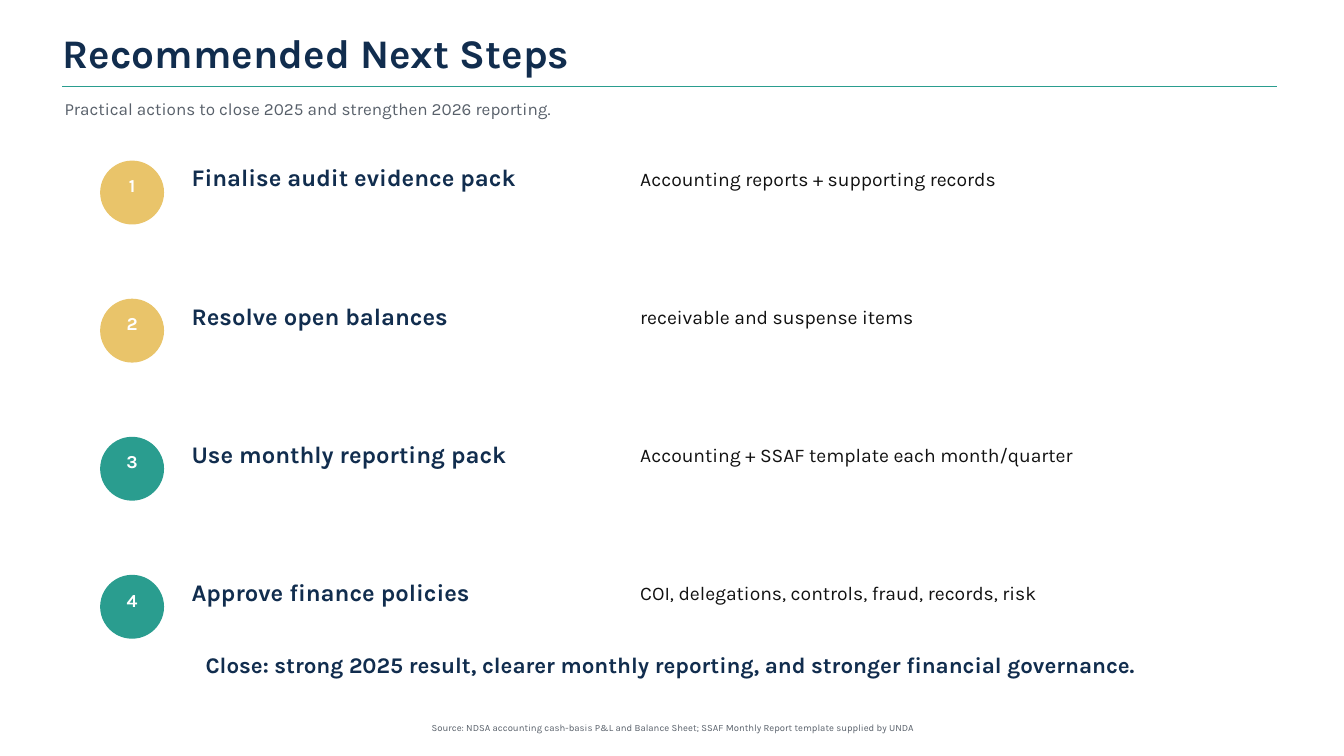
from pptx import Presentation
from pptx.dml.color import RGBColor
from pptx.enum import shapes, text
from pptx.oxml import ns
from pptx.util import Inches, Pt

NAVY = RGBColor(0x11, 0x2D, 0x4E)
TEAL = RGBColor(0x2A, 0x9D, 0x8F)
GOLD = RGBColor(0xE9, 0xC4, 0x6A)
GREY = RGBColor(0x58, 0x60, 0x6A)
INK = RGBColor(0x11, 0x11, 0x11)
WHITE = RGBColor(0xFF, 0xFF, 0xFF)
FONT = "Karla"
LEFT, MID = text.PP_ALIGN.LEFT, text.PP_ALIGN.CENTER

TITLE = "Recommended Next Steps"
LEAD = "Practical actions to close 2025 and strengthen 2026 reporting."
STEPS = [
    ("Finalise audit evidence pack", "Accounting reports + supporting records", GOLD),
    ("Resolve open balances", "receivable and suspense items", GOLD),
    ("Use monthly reporting pack", "Accounting + SSAF template each month/quarter", TEAL),
    ("Approve finance policies", "COI, delegations, controls, fraud, records, risk", TEAL),
]
CLOSE = "Close: strong 2025 result, clearer monthly reporting, and stronger financial governance."
SOURCE = ("Source: NDSA accounting cash-basis P&L and Balance Sheet; "
          "SSAF Monthly Report template supplied by UNDA")
TOP, PITCH, DISC = 1.6, 1.37, 0.62

deck = Presentation()
deck.slide_width, deck.slide_height = Inches(13.33), Inches(7.5)
slide = deck.slides.add_slide(deck.slide_layouts[5])
items = slide.shapes


def write(box, words, size, color, bold=False, align=LEFT):
    frame = box.text_frame
    frame.word_wrap = True
    frame.auto_size = text.MSO_AUTO_SIZE.NONE
    frame.vertical_anchor = text.MSO_ANCHOR.MIDDLE
    frame.margin_left = frame.margin_right = 0
    frame.margin_top = frame.margin_bottom = 0
    para = frame.paragraphs[0]
    para.alignment = align
    run = para.add_run()
    run.text = words
    font = run.font
    font.name, font.size, font.bold = FONT, Pt(size), bold
    font.color.rgb = color


def label(x, y, w, h, *style):
    box = items.add_textbox(Inches(x), Inches(y), Inches(w), Inches(h))
    write(box, *style)


title = items.title
title.left, title.top = Inches(0.62), Inches(0.33)
title.width, title.height = Inches(12), Inches(0.38)
write(title, TITLE, 29, NAVY, True)

rule = items.add_connector(shapes.MSO_CONNECTOR.STRAIGHT, Inches(0.62),
                           Inches(0.86), Inches(12.67), Inches(0.86))
rule.line.color.rgb = TEAL
rule.line.width = Pt(1.1)
props = rule._element.spPr
props.append(props.makeelement(ns.qn("a:effectLst"), {}))

label(0.64, 0.96, 12, 0.23, LEAD, 12.2, GREY)

for i, (step, detail, color) in enumerate(STEPS):
    y = TOP + i * PITCH
    disc = items.add_shape(shapes.MSO_SHAPE.OVAL, Inches(1), Inches(y),
                           Inches(DISC), Inches(DISC))
    disc.shadow.inherit = False
    disc.fill.solid()
    disc.fill.fore_color.rgb = color
    disc.line.color.rgb = color
    disc.line.width = Pt(1)
    label(1, y + 0.17, DISC, 0.14, str(i + 1), 13, WHITE, True, MID)
    label(1.9, y + 0.02, 4.3, 0.28, step, 17, NAVY, True)
    label(6.35, y + 0.04, 6.1, 0.26, detail, 13.8, INK)

label(1, 6.45, 11.3, 0.28, CLOSE, 16, NAVY, True, MID)
label(0.55, 7.14, 12.25, 0.15, SOURCE, 6.8, GREY, False, MID)

deck.save("out.pptx")
